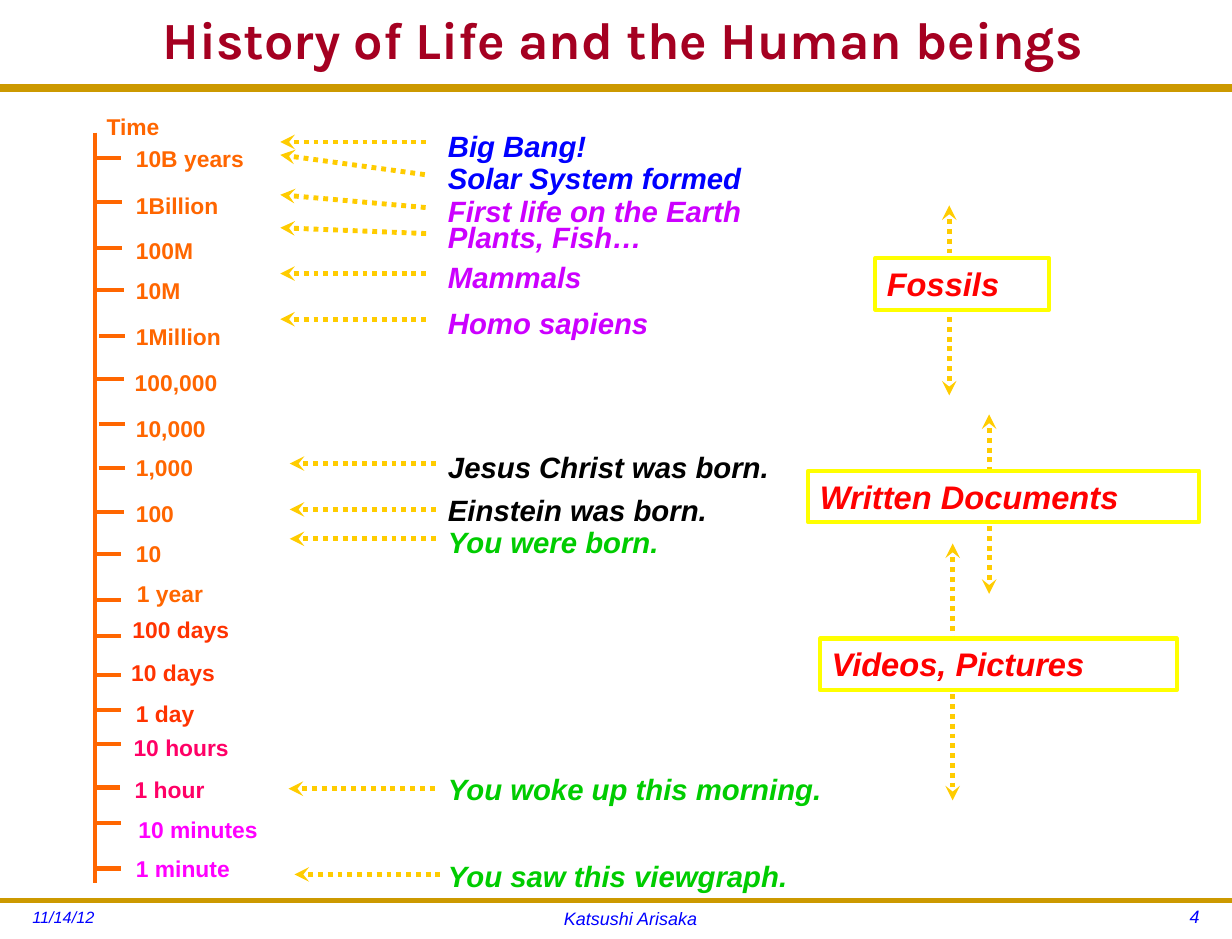
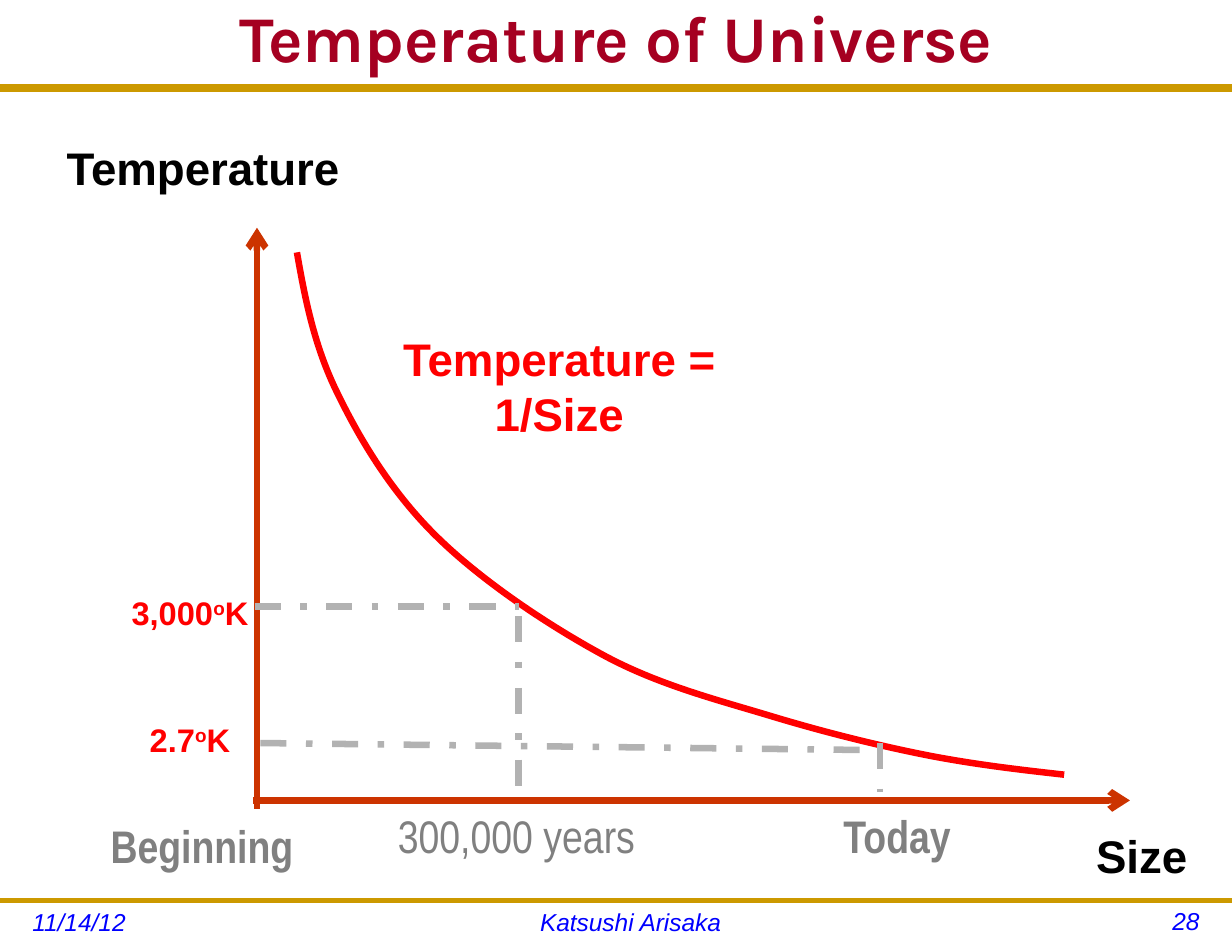
from lxml.etree import SubElement
from pptx import Presentation
from pptx.dml.color import RGBColor
from pptx.enum.dml import MSO_LINE as Dash
from pptx.enum.shapes import MSO_CONNECTOR as Conn, MSO_SHAPE as Shape
from pptx.enum.text import MSO_ANCHOR as Anchor, MSO_AUTO_SIZE as Fit, PP_ALIGN as Align
from pptx.oxml.ns import qn
from pptx.util import Pt

# Shared look
PAGE_W, PAGE_H = 756, 576
GOLD, CRIMSON, BLUE = "CC9900", "A50021", "0000FF"
ORANGE, VERMILION, PINK, MAGENTA = "FF6600", "FF3300", "FF0066", "FF00FF"
PURPLE, GREEN, BLACK, WHITE = "CC00FF", "00CC00", "000000", "FFFFFF"
AMBER, YELLOW, RED, RUST = "FFCC00", "FFFF00", "FF0000", "CC3300"
GRAY, SILVER = "808080", "B2B2B2"
FRAME_INSETS = (7.9, 3.6)

# Time scale: label, left, top, width, colour, tick left, tick height on the page
TIME_SCALE = [
    ("10B years", 76.3, 85, 108, ORANGE, 58.3, 97.2),
    ("1Billion", 76.3, 113.8, 144, ORANGE, 59, 123.8),
    ("100M", 76.3, 141.8, 90, ORANGE, 59, 151.9),
    ("10M", 76.3, 166.3, 60, ORANGE, 59.8, 177.8),
    ("1Million", 76.3, 194.4, 102, ORANGE, 60.5, 205.9),
    ("100,000", 75.6, 222.5, 102, ORANGE, 59.8, 232.6),
    ("10,000", 76.3, 250.6, 102, ORANGE, 60.5, 259.9),
    ("1,000", 76.3, 275, 72, ORANGE, 60.5, 287.3),
    ("100", 76.3, 303.1, 72, ORANGE, 59.8, 313.9),
    ("10", 76.3, 327.6, 72, ORANGE, 58.3, 339.8),
    ("1 year", 77, 352.1, 102, ORANGE, 58.3, 367.9),
    ("100 days", 74.2, 374.4, 114, VERMILION, 58.3, 390.2),
    ("10 days", 73.4, 400.3, 114, VERMILION, 58.3, 414),
    ("1 day", 76.3, 425.5, 114, VERMILION, 58.3, 435.6),
    ("10 hours", 74.9, 446.4, 114, PINK, 58.3, 456.5),
    ("1 hour", 75.6, 472.3, 114, PINK, 57.6, 483.1),
    ("10 minutes", 77.8, 496.8, 173.5, MAGENTA, 58.3, 504.7),
    ("1 minute", 76.3, 520.6, 174, MAGENTA, 58.3, 532.8),
]

# Events: text, top, width, colour, arrow tip x, tip y, arrow end y
EVENTS = [
    ("Big Bang!", 74.9, 141.8, BLUE, 172, 87.1, 87.1),
    ("Solar System formed", 95, 221.8, BLUE, 172, 95, 107.3),
    ("First life on the Earth", 115.2, 221.8, PURPLE, 172, 119.5, 127.4),
    ("Plants, Fish…", 131, 221.8, PURPLE, 172, 139.7, 143.3),
    ("Mammals", 155.5, 221.8, PURPLE, 172, 167.8, 167.8),
    ("Homo sapiens", 183.6, 221.8, PURPLE, 172, 195.8, 195.8),
    ("Jesus Christ was born.", 272.2, 257.8, BLACK, 177.8, 284.4, 284.4),
    ("Einstein was born.", 298.1, 221.8, BLACK, 177.8, 312.5, 312.5),
    ("You were born.", 318.2, 221.8, GREEN, 177.8, 330.5, 330.5),
    ("You woke up this morning.", 469.4, 270, GREEN, 177.1, 483.8, 483.8),
    ("You saw this viewgraph.", 522.7, 270, GREEN, 180.7, 536.4, 536.4),
]

# Records: text, left, top, width, span x, span top, span bottom
RECORDS = [
    ("Fossils", 537.1, 158.4, 106.6, 582.5, 126, 242.6),
    ("Written Documents", 496.1, 288.7, 239.8, 607, 254.2, 364.3),
    ("Videos, Pictures", 503.3, 391.7, 218.9, 584.6, 333.4, 491),
]

# Cooling curve: start, then three Bézier points for each stretch
CURVE_START = (182.2, 154.8)
CURVE = [
    (187.2, 183.6), (193, 213.1), (207.4, 241.9),
    (221.8, 271.4), (241.2, 303.1), (268.6, 329.8),
    (295.9, 356.4), (335.5, 383), (370.1, 401.8),
    (404.6, 420.5), (442.1, 429.8), (475.2, 439.9),
    (509, 450), (541.4, 457.9), (571, 463.7),
    (601.2, 469.4), (627.1, 472.3), (653, 475.2),
]


def rgb(hex_color):
    return RGBColor.from_string(hex_color)


def write(frame, text, size=14, color=BLACK, font="Arial", bold=False, italic=False,
          align=Align.LEFT, insets=(7.2, 3.6), wrap=True, fit=Fit.NONE,
          anchor=Anchor.TOP, spacing=None):
    """Fill a text frame; a part between two ^ marks is superscript."""
    frame.margin_left = frame.margin_right = Pt(insets[0])
    frame.margin_top = frame.margin_bottom = Pt(insets[1])
    frame.word_wrap, frame.auto_size, frame.vertical_anchor = wrap, fit, anchor
    paragraph = frame.paragraphs[0]
    paragraph.alignment = align
    if spacing:
        paragraph.line_spacing = spacing
    for index, part in enumerate(text.split("^")):
        run = paragraph.add_run()
        run.text = part
        run.font.name, run.font.size = font, Pt(size)
        run.font.bold, run.font.italic = bold, italic
        run.font.color.rgb = rgb(color)
        if index % 2:
            run.font._element.set("baseline", "30000")


def add_text(shapes, text, left, top, width, height, **style):
    box = shapes.add_textbox(Pt(left), Pt(top), Pt(width), Pt(height))
    write(box.text_frame, text, **style)


def add_line(shapes, start, end, color, weight, dash=None, head=None, tail=None):
    line = shapes.add_connector(Conn.STRAIGHT, *map(Pt, start + end))
    line.line.color.rgb, line.line.width = rgb(color), Pt(weight)
    if dash:
        line.line.dash_style = dash
    outline = line.line._get_or_add_ln()
    for tag, kind in (("a:headEnd", head), ("a:tailEnd", tail)):
        if kind:
            SubElement(outline, qn(tag), type=kind)
    SubElement(line.element.spPr, qn("a:effectLst"))
    return line


def add_curve(shapes, start, points, color, weight):
    builder = shapes.build_freeform(*map(Pt, start))
    builder.add_line_segments([(Pt(x), Pt(y)) for x, y in points], close=False)
    curve = builder.convert_to_shape()
    curve.shadow.inherit = False
    curve.fill.background()
    curve.line.color.rgb, curve.line.width = rgb(color), Pt(weight)
    # Join every three straight steps into one Bézier stretch
    outline = curve.element.find(".//" + qn("a:path"))
    steps = outline.findall(qn("a:lnTo"))
    for first in range(0, len(steps), 3):
        stretch = SubElement(outline, qn("a:cubicBezTo"))
        for step in steps[first:first + 3]:
            stretch.append(step[0])
            outline.remove(step)


def add_rules_to_master(prs, slide):
    """Put the two gold rules on the master, so that every slide shows them."""
    for number, (y, weight) in enumerate([(54, 4.5), (552.2, 3)]):
        rule = add_line(slide.shapes, (0, y), (PAGE_W, y), GOLD, weight)
        rule.element.nvCxnSpPr.cNvPr.set("id", str(100 + number))
        prs.slide_master.shapes.element.append(rule.element)


def add_slide(prs, title, title_left, title_width, title_size, number, footer_sizes):
    slide = prs.slides.add_slide(prs.slide_layouts[5])
    heading = slide.shapes.title
    heading.left, heading.top = Pt(title_left), Pt(0)
    heading.width, heading.height = Pt(title_width), Pt(54)
    write(heading.text_frame, title, size=title_size, color=CRIMSON, font="Karla",
          bold=True, align=Align.CENTER, insets=FRAME_INSETS, anchor=Anchor.MIDDLE,
          spacing=0.8)
    footers = [("11/14/12", 12, 553, 150, Align.LEFT),
               ("Katsushi Arisaka", 168, 553, 438, Align.CENTER),
               (number, 612, 552.2, 132, Align.RIGHT)]
    for (text, left, top, width, align), size in zip(footers, footer_sizes):
        add_text(slide.shapes, text, left, top, width, 23, size=size, color=BLUE,
                 italic=True, align=align, insets=FRAME_INSETS)
    return slide


def add_time_scale(shapes):
    label_style = dict(size=14, bold=True, fit=Fit.SHAPE_TO_FIT_TEXT)
    add_text(shapes, "Time", 58.3, 65.5, 69, 24.5, color=ORANGE, **label_style)
    add_line(shapes, (58.3, 81.4), (58.3, 541.4), ORANGE, 2.5)
    for label, left, top, width, color, tick_x, tick_y in TIME_SCALE:
        add_line(shapes, (tick_x, tick_y), (tick_x + 16, tick_y), ORANGE, 2.5)
        add_text(shapes, label, left, top, width, 24.5, color=color, **label_style)


def add_event(shapes, text, top, width, color, tip_x, tip_y, end_y):
    add_text(shapes, text, 267.8, top, width, 28.8, size=18, color=color, bold=True,
             italic=True, fit=Fit.SHAPE_TO_FIT_TEXT)
    add_line(shapes, (tip_x, tip_y), (tip_x + 90, end_y), AMBER, 3,
             dash=Dash.ROUND_DOT, head="stealth")


def add_record(shapes, text, left, top, width, span_x, span_top, span_bottom):
    group = shapes.add_group_shape().shapes
    add_line(group, (span_x, span_top), (span_x, span_bottom), AMBER, 3,
             dash=Dash.ROUND_DOT, head="stealth", tail="stealth")
    box = group.add_shape(Shape.RECTANGLE, Pt(left), Pt(top), Pt(width), Pt(31.7))
    box.shadow.inherit = False
    box.fill.solid()
    box.fill.fore_color.rgb = rgb(WHITE)
    box.line.color.rgb, box.line.width = rgb(YELLOW), Pt(2.5)
    write(box.text_frame, text, size=20, color=RED, bold=True, italic=True,
          fit=Fit.SHAPE_TO_FIT_TEXT)


def build_history(prs):
    slide = add_slide(prs, "History of Life and the Human beings", 20.2, 724.3, 32,
                      "4", (10, 11, 11))
    add_time_scale(slide.shapes)
    for event in EVENTS:
        add_event(slide.shapes, *event)
    for record in RECORDS:
        add_record(slide.shapes, *record)
    return slide


def build_temperature(prs):
    slide = add_slide(prs, "Temperature of Universe", 12, 732, 40, "28", (15, 15, 15))
    shapes = slide.shapes

    # Axes
    add_line(shapes, (155.5, 491), (693.4, 491), RUST, 4, tail="arrow")
    add_line(shapes, (157.7, 139.7), (157.7, 496.1), RUST, 4, head="arrow")

    # Curve and the guide lines to it
    add_curve(shapes, CURVE_START, CURVE, RED, 4)
    guides = [((159.8, 455.8), (532.8, 460.1)), ((318.2, 378), (318.2, 486)),
              ((156.2, 372.2), (318.2, 372.2)), ((540, 455.8), (540, 486))]
    for start, end in guides:
        add_line(shapes, start, end, SILVER, 4, dash=Dash.DASH_DOT)

    # Labels
    axis = dict(size=28, bold=True)
    era = dict(size=28, color=GRAY, font="Arial Narrow")
    reading = dict(size=20, color=RED, bold=True)
    labels = [
        ("Size", 665.3, 504, 70.6, 41, axis),
        ("Temperature", 32.4, 82.1, 184.3, 41, axis),
        ("Today", 509.8, 491.8, 81.4, 41, dict(era, bold=True)),
        ("Beginning", 59.8, 498.2, 128.2, 41, dict(era, bold=True)),
        ("300,000 years", 234, 491.8, 165.6, 41, era),
        ("Temperature = 1/Size", 215.3, 199.4, 255.6, 74, dict(axis, color=RED, wrap=True)),
        ("2.7^o^K", 84.2, 437.8, 64.8, 31.7, reading),
        ("3,000^o^K", 72.7, 360, 87.8, 31.7, reading),
    ]
    common = dict(align=Align.CENTER, wrap=False, fit=Fit.SHAPE_TO_FIT_TEXT)
    for text, left, top, width, height, style in labels:
        add_text(shapes, text, left, top, width, height, **{**common, **style})


def main():
    prs = Presentation()
    prs.slide_width, prs.slide_height = Pt(PAGE_W), Pt(PAGE_H)
    history = build_history(prs)
    add_rules_to_master(prs, history)
    build_temperature(prs)
    prs.save("out.pptx")


if __name__ == "__main__":
    main()
